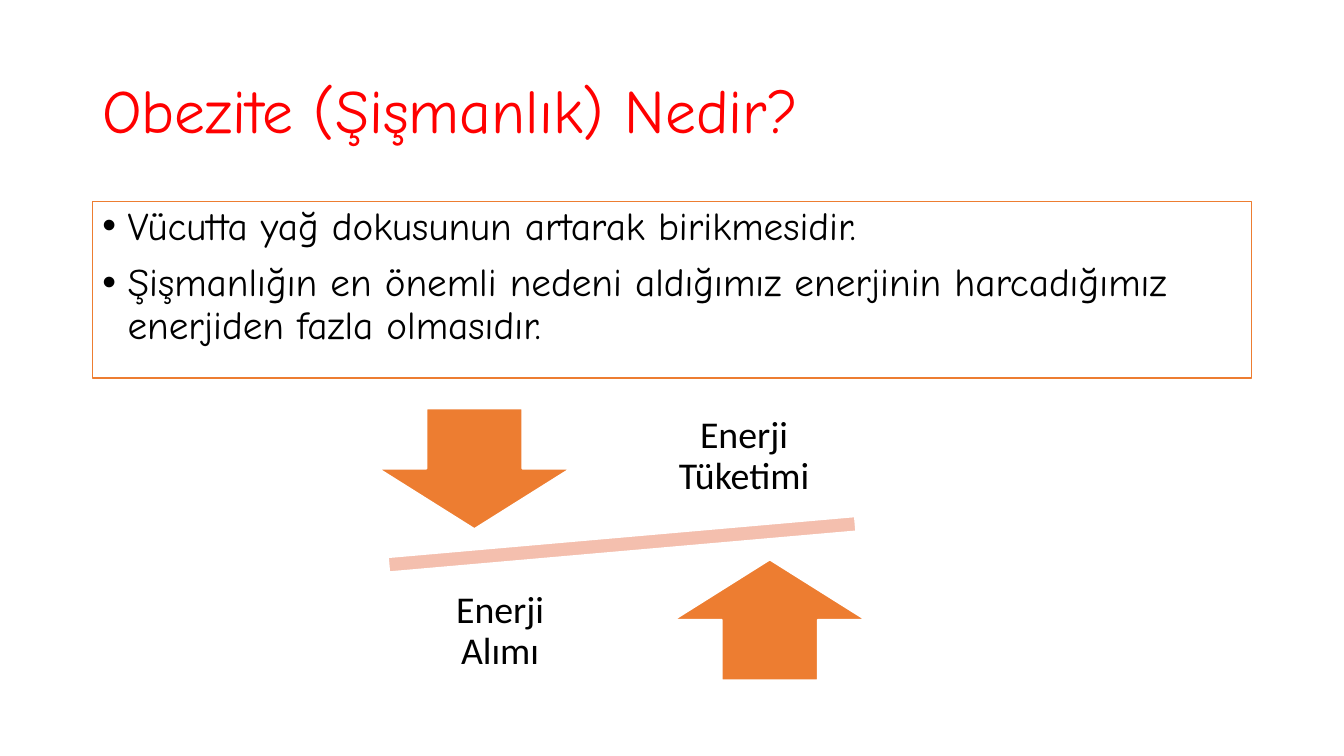
from pptx import Presentation
from pptx import util as u
from pptx.dml.color import RGBColor
from pptx.enum import shapes, text

TITLE = "Obezite (Şişmanlık) Nedir?"
POINTS = [
    "Vücutta yağ dokusunun artarak birikmesidir.",
    "Şişmanlığın en önemli nedeni aldığımız enerjinin harcadığımız enerjiden fazla olmasıdır.",
]
# Each side of the seesaw: direction from the pivot, arrow, label on the other side
SIDES = [
    (-1, shapes.MSO_SHAPE.DOWN_ARROW, "Enerji Tüketimi"),
    (1, shapes.MSO_SHAPE.UP_ARROW, "Enerji Alımı"),
]

RED = RGBColor(0xFF, 0x00, 0x00)
BLACK = RGBColor(0x00, 0x00, 0x00)
WHITE = RGBColor(0xFF, 0xFF, 0xFF)
ORANGE = RGBColor(0xED, 0x7D, 0x31)
PINK = RGBColor(0xF4, 0xBF, 0xAE)
HEADING_FONT, LABEL_FONT = "Comic Neue", "Calibri"

WIDTH, HEIGHT = 13.33, 7.5
CONTENT_WIDTH = 11.5
MARGIN = (WIDTH - CONTENT_WIDTH) / 2
PIVOT = (6.17, 5.4)
BEAM_SIZE, ARROW_SIZE, LABEL_SIZE = (6.33, 0.65), (1.91, 1.2), (2.04, 1.26)
ARROW_OFFSET, LABEL_OFFSET = (1.465, 0.75), (1.21, 0.87)
LABEL_INSET = u.Inches(0.21)


def place(shape, left, top, width, height):
    shape.left, shape.top = u.Inches(left), u.Inches(top)
    shape.width, shape.height = u.Inches(width), u.Inches(height)


def around_pivot(size, offset=(0, 0), direction=1):
    """Return the box of this size whose centre lies at the offset from the pivot."""
    corner = [p + direction * o - s / 2 for p, o, s in zip(PIVOT, offset, size)]
    return [u.Inches(length) for length in (*corner, *size)]


def style(paragraph, font_name, size, color, alignment):
    paragraph.font.name = font_name
    paragraph.font.size = u.Pt(size)
    paragraph.font.color.rgb = color
    paragraph.alignment = alignment
    paragraph.line_spacing = 0.9


def add_part(slide, kind, box, color):
    part = slide.shapes.add_shape(kind, *box)
    part.shadow.inherit = False
    part.fill.solid()
    part.fill.fore_color.rgb = color
    part.line.color.rgb = WHITE
    part.line.width = u.Pt(1.5)
    return part


def add_label(slide, wording, box):
    frame = slide.shapes.add_textbox(*box).text_frame
    frame.word_wrap = True
    frame.vertical_anchor = text.MSO_ANCHOR.MIDDLE
    frame.margin_left = frame.margin_right = LABEL_INSET
    frame.margin_top = frame.margin_bottom = LABEL_INSET
    frame.text = wording
    style(frame.paragraphs[0], LABEL_FONT, 27, BLACK, text.PP_ALIGN.CENTER)


def fill_title(title):
    place(title, MARGIN, 0.4, CONTENT_WIDTH, 1.45)
    frame = title.text_frame
    frame.text = TITLE
    frame.auto_size = text.MSO_AUTO_SIZE.NONE
    frame.vertical_anchor = text.MSO_ANCHOR.MIDDLE
    style(frame.paragraphs[0], HEADING_FONT, 44, RED, text.PP_ALIGN.LEFT)


def fill_body(body):
    place(body, MARGIN, 2, CONTENT_WIDTH, 1.75)
    body.fill.solid()
    body.fill.fore_color.rgb = WHITE
    body.line.color.rgb = ORANGE
    body.line.width = u.Pt(1)
    frame = body.text_frame
    frame.text = "\n".join(POINTS)
    frame.auto_size = text.MSO_AUTO_SIZE.NONE
    for paragraph in frame.paragraphs:
        style(paragraph, HEADING_FONT, 28, BLACK, text.PP_ALIGN.LEFT)
        paragraph.space_before = u.Pt(10)
        properties = paragraph._p.get_or_add_pPr()
        properties.set("marL", str(u.Inches(0.25)))
        properties.set("indent", str(-u.Inches(0.25)))


def main():
    presentation = Presentation()
    presentation.slide_width = u.Inches(WIDTH)
    presentation.slide_height = u.Inches(HEIGHT)
    slide = presentation.slides.add_slide(presentation.slide_layouts[1])
    fill_title(slide.shapes.title)
    fill_body(slide.placeholders[1])

    beam = add_part(slide, shapes.MSO_SHAPE.MATH_MINUS, around_pivot(BEAM_SIZE), PINK)
    beam.rotation = 355
    for direction, arrow, label in SIDES:
        add_part(slide, arrow, around_pivot(ARROW_SIZE, ARROW_OFFSET, direction), ORANGE)
        across, down = LABEL_OFFSET
        add_label(slide, label, around_pivot(LABEL_SIZE, (-across, down), direction))

    presentation.save("out.pptx")


if __name__ == "__main__":
    main()
